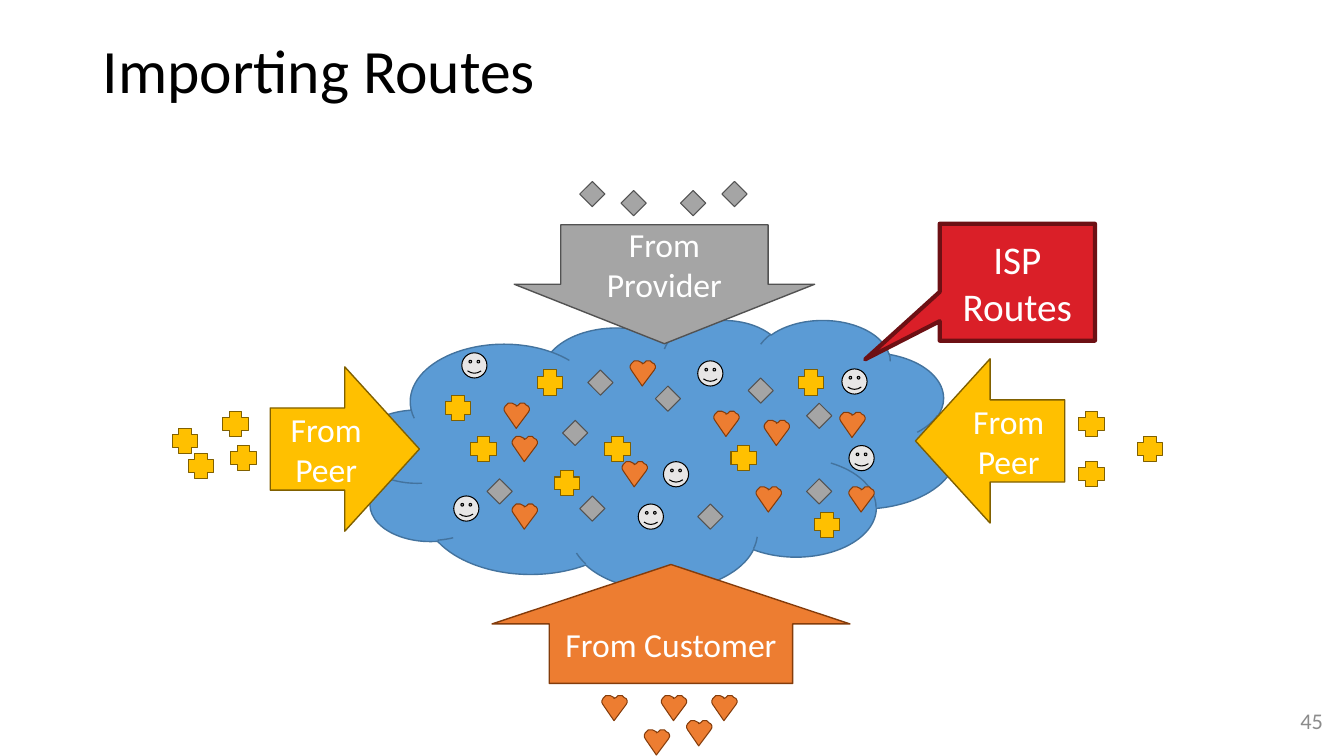
from dataclasses import dataclass

import pptx
import pptx.dml.color
import pptx.enum.shapes
import pptx.enum.text
import pptx.util

Inches = pptx.util.Inches
Pt = pptx.util.Pt
RGBColor = pptx.dml.color.RGBColor
Kind = pptx.enum.shapes.MSO_SHAPE
Align = pptx.enum.text.PP_ALIGN
Anchor = pptx.enum.text.MSO_ANCHOR

FONT = "Calibri"
BLACK = RGBColor(0x00, 0x00, 0x00)
WHITE = RGBColor(0xFF, 0xFF, 0xFF)
PALE = RGBColor(0xE7, 0xE6, 0xE6)
MUTED = RGBColor(0x8C, 0x8C, 0x8C)
BLUE = RGBColor(0x5B, 0x9B, 0xD5)
NAVY = RGBColor(0x43, 0x73, 0x9E)
GRAY = RGBColor(0xA5, 0xA5, 0xA5)
DARK = RGBColor(0x52, 0x52, 0x52)
GOLD = RGBColor(0xFF, 0xC0, 0x00)
BROWN = RGBColor(0x80, 0x60, 0x00)
ORANGE = RGBColor(0xED, 0x7D, 0x31)
RUST = RGBColor(0x84, 0x3C, 0x0B)
RED = RGBColor(0xDA, 0x1F, 0x28)
MAROON = RGBColor(0x6D, 0x10, 0x14)

SIZE = 0.25  # side of every route marker
# Left half of a heart in hundredths of an inch, from notch to tip
HALF = [(12.5, 2.8), (11.5, 1.6), (10, 0.8), (8.5, 0.2), (6.5, 0), (4.5, 0.4),
        (2.5, 1.6), (1, 3), (0.2, 5), (0.1, 7), (0.7, 9), (12.5, 25)]
HEART = HALF + [(25 - x, y) for x, y in HALF[-2:0:-1]]

Spots = list[tuple[float, float]]


@dataclass
class Block:
    kind: Kind
    box: tuple[float, float, float, float]
    fill: RGBColor
    edge: RGBColor
    text: str = ""
    adjust: tuple[float, ...] = ()
    size: int = 24
    width: float = 1


@dataclass
class Routes:
    """Markers of one kind; no preset kind means a heart."""
    kind: Kind | None
    fill: RGBColor
    edge: RGBColor
    spots: Spots


CLOUD = Block(Kind.CLOUD, (3.54, 3.17, 5.95, 2.68), BLUE, NAVY)

ROUTES = [
    Routes(Kind.DIAMOND, GRAY, DARK, [
        (8, 4), (5.75, 4.92), (8, 4.75), (5.83, 3.67), (7.42, 3.75),
        (6.92, 5), (6.5, 3.83), (4.83, 4.75), (5.58, 4.17),
        (5.75, 1.8), (6.16, 1.89), (6.75, 1.89), (7.16, 1.8)]),
    Routes(Kind.CROSS, GOLD, BROWN, [
        (4.42, 3.92), (6, 4.33), (8.08, 5.08), (7.92, 3.67), (4.67, 4.33),
        (5.5, 4.67), (7.25, 4.42), (5.33, 3.67),
        (1.71, 4.25), (1.87, 4.5), (2.21, 4.08), (2.29, 4.42),
        (10.7, 4.08), (10.7, 4.58), (11.28, 4.33)]),
    Routes(Kind.SMILEY_FACE, PALE, BLACK, [
        (6.33, 5), (6.92, 3.58), (4.5, 4.92), (4.58, 3.5), (8.42, 4.42),
        (6.58, 4.58), (8.35, 3.66)]),
    Routes(None, ORANGE, RUST, [
        (8.42, 4.83), (7.5, 4.83), (5.08, 5), (5.08, 4.33), (5, 4),
        (6.17, 4.58), (7.08, 4.08), (6.25, 3.58), (8.33, 4.09), (7.58, 4.17),
        (5.97, 6.9), (6.56, 6.9), (7.06, 6.9), (6.81, 7.15), (6.39, 7.24)]),
]

LABELS = [
    Block(Kind.DOWN_ARROW, (5.1, 2.23, 2.98, 1.18), GRAY, DARK,
          "From Provider", (0.69, 0.5)),
    Block(Kind.LEFT_ARROW, (9.08, 3.56, 1.48, 1.63), GOLD, BROWN, "From Peer"),
    Block(Kind.RIGHT_ARROW, (2.68, 3.64, 1.48, 1.63), GOLD, BROWN, "From Peer"),
    Block(Kind.UP_ARROW, (4.88, 5.6, 3.55, 1.18), ORANGE, RUST,
          "From Customer", (0.68, 0.5)),
    Block(Kind.RECTANGULAR_CALLOUT, (9.32, 2.22, 1.54, 1.16), RED, MAROON,
          "ISP Routes", (-0.98, 0.66), 28, 3),
]


def paint(shape, fill: RGBColor, edge: RGBColor, width: float) -> None:
    shape.shadow.inherit = False
    shape.fill.solid()
    shape.fill.fore_color.rgb = fill
    shape.line.color.rgb = edge
    shape.line.width = Pt(width)


def write(shape, text: str, size: int, color: RGBColor, align: Align):
    frame = shape.text_frame
    frame.word_wrap = True
    frame.vertical_anchor = Anchor.MIDDLE
    line = frame.paragraphs[0]
    line.text = text
    line.alignment = align
    line.font.name = FONT
    line.font.size = Pt(size)
    line.font.color.rgb = color
    return line


def draw_block(shapes, block: Block) -> None:
    shape = shapes.add_shape(block.kind, *map(Inches, block.box))
    for i, value in enumerate(block.adjust):
        shape.adjustments[i] = value
    paint(shape, block.fill, block.edge, block.width)
    if block.text:
        write(shape, block.text, block.size, WHITE, Align.CENTER)


def draw_heart(shapes, left: float, top: float):
    pen = shapes.build_freeform(*HEART[0], scale=Inches(0.01))
    pen.add_line_segments(HEART[1:], close=True)
    return pen.convert_to_shape(Inches(left), Inches(top))


def draw_routes(shapes, routes: Routes) -> None:
    for left, top in routes.spots:
        if routes.kind is None:
            mark = draw_heart(shapes, left, top)
        else:
            mark = shapes.add_shape(routes.kind, Inches(left), Inches(top),
                                    Inches(SIZE), Inches(SIZE))
        paint(mark, routes.fill, routes.edge, 0.75)


def main() -> None:
    deck = pptx.Presentation()
    deck.slide_width = Inches(13.33)
    deck.slide_height = Inches(7.5)
    shapes = deck.slides.add_slide(deck.slide_layouts[6]).shapes

    title = shapes.add_textbox(Inches(0.92), Inches(0), Inches(11.5), Inches(1.45))
    line = write(title, "Importing Routes", 44, BLACK, Align.LEFT)
    line.line_spacing = 0.9
    number = shapes.add_textbox(Inches(12.42), Inches(6.95), Inches(0.8), Inches(0.4))
    write(number, "45", 16, MUTED, Align.RIGHT)

    draw_block(shapes, CLOUD)
    for routes in ROUTES:
        draw_routes(shapes, routes)
    for label in LABELS:
        draw_block(shapes, label)
    deck.save("out.pptx")


if __name__ == "__main__":
    main()
